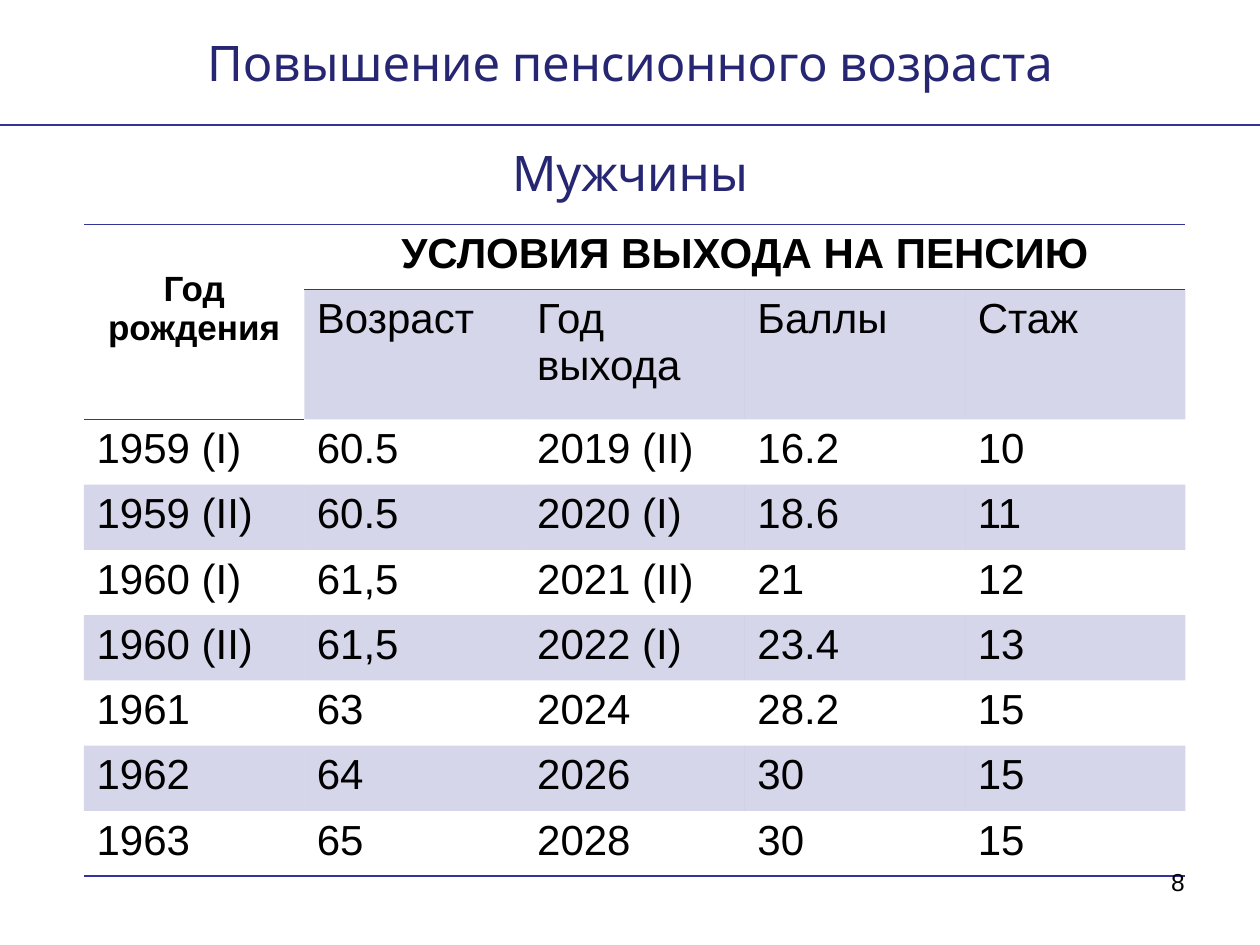
from lxml.etree import SubElement
from pptx import Presentation
from pptx.dml.color import RGBColor
from pptx.enum.shapes import MSO_CONNECTOR
from pptx.enum.text import MSO_ANCHOR, MSO_AUTO_SIZE, PP_ALIGN
from pptx.oxml import parse_xml
from pptx.oxml.ns import nsdecls, qn
from pptx.util import Pt

NAVY, BLACK, TITLE_BLUE = "333399", "000000", "262673"


def paint(color_format, value):
    color_format.rgb = RGBColor.from_string(value)


def write(paragraph, text, align, color, **font_values):
    run = paragraph.add_run()
    run.text = text
    paragraph.alignment = align
    paint(run.font.color, color)
    for name, value in font_values.items():
        setattr(run.font, name, value)


deck = Presentation()
deck.slide_width, deck.slide_height = Pt(720), Pt(540)
slide = deck.slides.add_slide(deck.slide_layouts[5])

heading = slide.shapes.title
heading_box = {"left": Pt(36), "top": Pt(21.6), "width": Pt(648), "height": Pt(90)}
for name, value in heading_box.items():
    setattr(heading, name, value)
heading_text = heading.text_frame
heading_text.auto_size = MSO_AUTO_SIZE.NONE
heading_text.vertical_anchor = MSO_ANCHOR.MIDDLE
topic = heading_text.paragraphs[0]
group = heading_text.add_paragraph()
group.space_before = Pt(29.3)
for paragraph, text in ((topic, "Повышение пенсионного возраста"), (group, "Мужчины")):
    write(paragraph, text, PP_ALIGN.CENTER, TITLE_BLUE, size=Pt(28), name="Karla")

rule = slide.shapes.add_connector(MSO_CONNECTOR.STRAIGHT, Pt(720), Pt(71.5), Pt(0), Pt(71.5))
paint(rule.line.color, NAVY)
rule.line.width = Pt(1.5)
SubElement(rule._element.spPr, qn("a:effectLst"))

rows = [
    ["Год рождения", "УСЛОВИЯ ВЫХОДА НА ПЕНСИЮ", "", "", ""],
    ["", "Возраст", "Год выхода", "Баллы", "Стаж"],
    ["1959 (I)", "60.5", "2019 (II)", "16.2", "10"],
    ["1959 (II)", "60.5", "2020 (I)", "18.6", "11"],
    ["1960 (I)", "61,5", "2021 (II)", "21", "12"],
    ["1960 (II)", "61,5", "2022 (I)", "23.4", "13"],
    ["1961", "63", "2024", "28.2", "15"],
    ["1962", "64", "2026", "30", "15"],
    ["1963", "65", "2028", "30", "15"],
]
last = len(rows) - 1
conditions = slide.shapes.add_table(
    len(rows), 5, Pt(48), Pt(128.2), Pt(629.5), Pt(372.6)
).table
conditions.first_row = conditions.horz_banding = False
style_id = conditions._tbl.tblPr.find(qn("a:tableStyleId"))
style_id.text = "{2D5ABB26-0587-4C30-8999-92F81FD0307C}"
for column in conditions.columns:
    column.width = Pt(125.9)
for r, row in enumerate(conditions.rows):
    row.height = Pt(74.2) if r == 1 else Pt(37.3)

birth_year = conditions.cell(0, 0)
birth_year.merge(conditions.cell(1, 0))
conditions.cell(0, 1).merge(conditions.cell(0, 4))
birth_year.vertical_anchor = MSO_ANCHOR.MIDDLE
birth_year.margin_bottom = Pt(18)

for r, values in enumerate(rows):
    for c, text in enumerate(values):
        cell = conditions.cell(r, c)
        header = r == 0
        if text:
            write(cell.text_frame.paragraphs[0], text,
                  PP_ALIGN.CENTER if header else PP_ALIGN.LEFT, BLACK,
                  size=Pt(20) if header and c == 0 else Pt(24), name="Arial", bold=header)
        if r % 2 and (r, c) != (1, 0):
            cell.fill.solid()
            paint(cell.fill.fore_color, NAVY)
            tint = cell._tc.tcPr.find(".//" + qn("a:srgbClr"))
            SubElement(tint, qn("a:alpha"), val="20000")
        else:
            cell.fill.background()
        edges = {"lnB": r in (0, last) or (r, c) == (1, 0), "lnT": header}
        for edge, drawn in edges.items():
            if drawn:
                cell._tc.tcPr.insert(0, parse_xml(
                    f'<a:{edge} {nsdecls("a")} w="12700"><a:solidFill>'
                    f'<a:srgbClr val="{NAVY}"/></a:solidFill></a:{edge}>'))

page_number = slide.shapes.add_textbox(Pt(516), Pt(491.8), Pt(168), Pt(37.4)).text_frame
page_number.word_wrap = True
write(page_number.paragraphs[0], "8", PP_ALIGN.RIGHT, BLACK, size=Pt(14), name="Arial")

deck.save("out.pptx")
